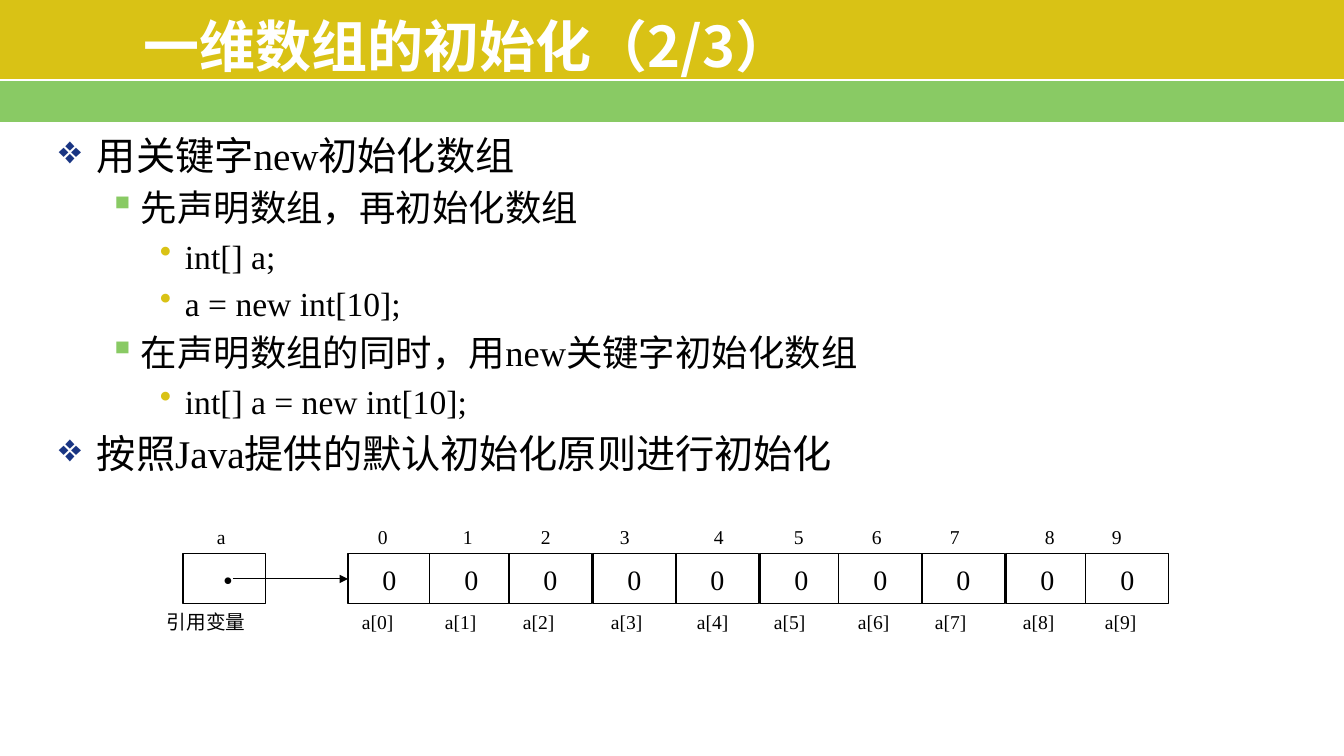
from dataclasses import dataclass

from lxml import etree
from pptx import Presentation, util as u
from pptx.dml.color import RGBColor
from pptx.enum import shapes, text
from pptx.oxml.ns import qn

PX = 914400 / 100.8


@dataclass(frozen=True)
class Theme:
    gold: str = "D9C215"
    green: str = "89CA64"
    navy: str = "193583"
    white: str = "FFFFFF"
    black: str = "000000"
    latin: str = "Times New Roman"
    cjk: str = "Noto Sans CJK SC"
    title: int = 40
    levels: tuple = (28, 26, 24)
    value: int = 20
    label: int = 14


theme = Theme()


def px(*lengths):
    return [u.Emu(round(length * PX)) for length in lengths]


def write(para, words, *, size, color=theme.black, font=theme.latin, bold=False,
          align=text.PP_ALIGN.LEFT):
    para.alignment = align
    span = para.add_run()
    span.text = words
    span.font.size = u.Pt(size)
    span.font.bold = bold
    span.font.name = font
    span.font.color.rgb = RGBColor.from_string(color)
    latin = span.font._element.find(qn("a:latin"))
    east_asian = etree.Element(qn("a:ea"), typeface=theme.cjk)
    latin.addnext(east_asian)


deck = Presentation()
deck.slide_width, deck.slide_height = px(1344, 756)
page = deck.slides.add_slide(deck.slide_layouts[6])

# Header bands
for top, height, color in ((80, 42, theme.green), (0, 80, theme.gold)):
    band = page.shapes.add_shape(shapes.MSO_SHAPE.RECTANGLE, *px(0, top, 1344, height))
    band.shadow.inherit = False
    band.fill.solid()
    band.fill.fore_color.rgb = RGBColor.from_string(color)
    band.line.fill.background()

rule = page.shapes.add_connector(shapes.MSO_CONNECTOR.STRAIGHT, *px(0, 80, 1344, 80))
rule.line.color.rgb = RGBColor.from_string(theme.white)
rule.line.width = u.Pt(1)
etree.SubElement(rule._element.spPr, qn("a:effectLst"))

title = page.shapes.add_textbox(*px(134, 19, 1041, 53))
title.text_frame.word_wrap = True
title.text_frame.vertical_anchor = text.MSO_ANCHOR.MIDDLE
write(title.text_frame.paragraphs[0], "一维数组的初始化（2/3）", size=theme.title,
      color=theme.white, font=theme.cjk, bold=True)

# Bulleted outline: level and wording
outline = (
    (0, "用关键字new初始化数组"),
    (1, "先声明数组，再初始化数组"),
    (2, "int[] a;"),
    (2, "a = new int[10];"),
    (1, "在声明数组的同时，用new关键字初始化数组"),
    (2, "int[] a = new int[10];"),
    (0, "按照Java提供的默认初始化原则进行初始化"),
)
# Per level: bullet, bullet colour, text margin, hanging indent
bullets = (
    ("❖", theme.navy, 38, 38),
    ("▪", theme.green, 82, 32),
    ("•", theme.gold, 126, 25),
)
body = page.shapes.add_textbox(*px(49, 126, 1254, 580)).text_frame
body.word_wrap = True
for number, (level, words) in enumerate(outline):
    para = body.add_paragraph() if number else body.paragraphs[0]
    mark, color, margin, hanging = bullets[level]
    para.level = level
    props = para._p.get_or_add_pPr()
    margin, hanging = px(margin, hanging)
    props.set("marL", str(margin))
    props.set("indent", str(-hanging))
    mark_color = etree.SubElement(props, qn("a:buClr"))
    etree.SubElement(mark_color, qn("a:srgbClr"), val=color)
    etree.SubElement(props, qn("a:buChar"), char=mark)
    size = theme.levels[level]
    if number:
        para.space_before = u.Pt(size * 0.2)
    write(para, words, size=size, align=text.PP_ALIGN.JUSTIFY)

# Array diagram: the reference variable, then ten elements
cell_lefts = (348, 430, 509, 593, 676, 760, 839, 922, 1006, 1086)
index_lefts = (368, 453, 531, 610, 704, 784, 862, 940, 1035, 1102)
name_lefts = (352, 435, 513, 601, 687, 764, 848, 925, 1013, 1095)

cells = []
for left, words in [(183, " •")] + [(left, "0") for left in cell_lefts]:
    cell = page.shapes.add_shape(shapes.MSO_SHAPE.RECTANGLE, *px(left, 554, 83, 50))
    cell.shadow.inherit = False
    cell.fill.solid()
    cell.fill.fore_color.rgb = RGBColor.from_string(theme.white)
    cell.line.color.rgb = RGBColor.from_string(theme.black)
    cell.line.width = u.Pt(0.75)
    cell.text_frame.vertical_anchor = text.MSO_ANCHOR.MIDDLE
    write(cell.text_frame.paragraphs[0], words, size=theme.value,
          align=text.PP_ALIGN.CENTER)
    cells.append(cell)

arrow = page.shapes.add_connector(shapes.MSO_CONNECTOR.STRAIGHT, *px(233, 579, 348, 579))
arrow.end_connect(cells[1], 1)
arrow.line.color.rgb = RGBColor.from_string(theme.black)
arrow.line.width = u.Pt(0.75)
etree.SubElement(arrow.line._get_or_add_ln(), qn("a:tailEnd"), type="triangle")
etree.SubElement(arrow._element.spPr, qn("a:effectLst"))

labels = [(207, 520, 30, "a"), (157, 605, 100, "引用变量")]
labels += [(left, 520, 30, str(index)) for index, left in enumerate(index_lefts)]
labels += [(left, 605, 52, f"a[{index}]") for index, left in enumerate(name_lefts)]
for left, top, width, words in labels:
    box = page.shapes.add_textbox(*px(left, top, width, 34))
    box.text_frame.word_wrap = False
    write(box.text_frame.paragraphs[0], words, size=theme.label)

deck.save("out.pptx")
